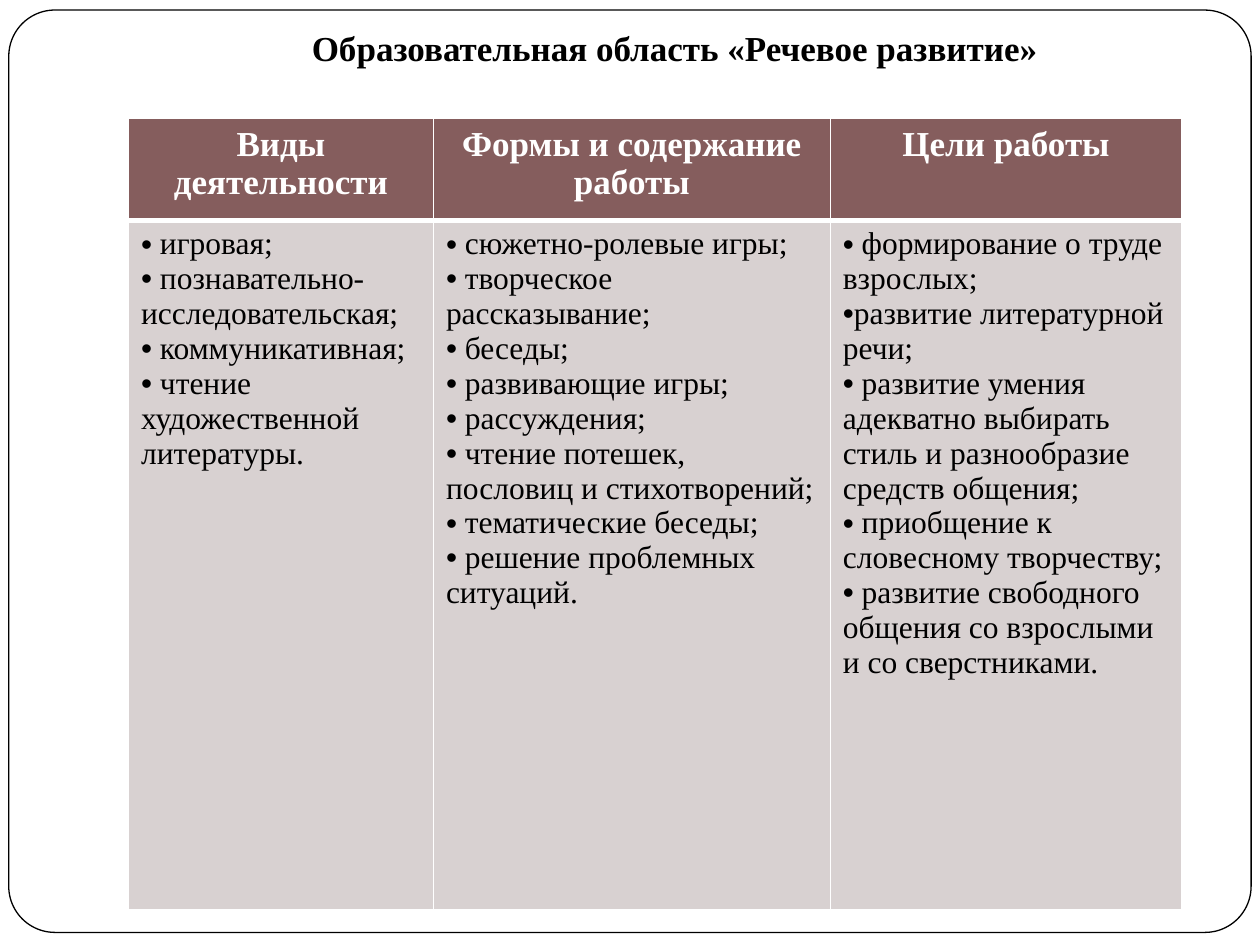
from lxml import etree
from pptx import Presentation
from pptx.dml.color import RGBColor
from pptx.enum.shapes import MSO_SHAPE
from pptx.enum.text import MSO_ANCHOR, PP_ALIGN
from pptx.oxml.ns import qn
from pptx.util import Inches, Pt

# Content
TITLE = "Образовательная область «Речевое развитие»"
COLUMNS = [
    ("Виды деятельности", 2.42, [
        " игровая;",
        " познавательно-исследовательская;",
        " коммуникативная;",
        " чтение художественной литературы.",
    ]),
    ("Формы и содержание работы", 3.15, [
        " сюжетно-ролевые игры;",
        " творческое рассказывание;",
        " беседы;",
        " развивающие игры;",
        " рассуждения;",
        " чтение потешек, пословиц и стихотворений;",
        " тематические беседы;",
        " решение проблемных ситуаций.",
    ]),
    ("Цели работы", 2.79, [
        " формирование о труде взрослых;",
        "развитие литературной речи;",
        " развитие умения адекватно выбирать стиль и разнообразие средств общения;",
        " приобщение к словесному творчеству;",
        " развитие свободного общения со взрослыми и со сверстниками.",
    ]),
]
ROW_HEIGHTS = [0.81, 5.47]

FONT = "Times New Roman"
BLACK = RGBColor(0x00, 0x00, 0x00)
WHITE = RGBColor(0xFF, 0xFF, 0xFF)
HEADER_FILL = RGBColor(0x85, 0x5D, 0x5D)
BODY_FILL = RGBColor(0xD8, 0xD1, 0xD1)


def format_font(p, size, color, bold):
    for r in p.runs:
        r.font.name = FONT
        r.font.size = Pt(size)
        r.font.bold = bold
        r.font.color.rgb = color


def add_bullet(p):
    pPr = p._p.get_or_add_pPr()
    pPr.set("marL", "0")
    pPr.set("indent", str(-Inches(0.12)))
    color = etree.SubElement(pPr, qn("a:buClr"))
    etree.SubElement(color, qn("a:srgbClr"), val=str(BLACK))
    etree.SubElement(pPr, qn("a:buFont"), typeface="Arial")
    etree.SubElement(pPr, qn("a:buChar"), char="•")


def set_borders(cell, top, bottom):
    tcPr = cell._tc.get_or_add_tcPr()
    widths = {"a:lnL": 1, "a:lnR": 1, "a:lnT": top, "a:lnB": bottom}
    for i, (tag, width) in enumerate(widths.items()):
        ln = etree.Element(qn(tag), w=str(Pt(width)))
        fill = etree.SubElement(ln, qn("a:solidFill"))
        etree.SubElement(fill, qn("a:srgbClr"), val=str(WHITE))
        tcPr.insert(i, ln)


def fill_cell(cell, color, top, bottom):
    cell.fill.solid()
    cell.fill.fore_color.rgb = color
    set_borders(cell, top, bottom)


prs = Presentation()
prs.slide_width, prs.slide_height = Inches(10), Inches(7.5)
s = prs.slides.add_slide(prs.slide_layouts[5])

# Rounded frame, sent behind the title
frame = s.shapes.add_shape(MSO_SHAPE.ROUNDED_RECTANGLE, Inches(0.07),
                           Inches(0.08), Inches(9.86), Inches(7.32))
frame.adjustments[0] = 0.05
frame.shadow.inherit = False
frame.fill.solid()
frame.fill.fore_color.rgb = WHITE
frame.line.color.rgb = BLACK
frame.line.width = Pt(0.75)
s.shapes._spTree.insert(2, frame._element)

# Title
title = s.shapes.title
title.left, title.top = Inches(1.33), Inches(0.16)
title.width, title.height = Inches(8.05), Inches(0.44)
tf = title.text_frame
tf.text = TITLE
tf.vertical_anchor = MSO_ANCHOR.TOP
tf.paragraphs[0].alignment = PP_ALIGN.CENTER
format_font(tf.paragraphs[0], 20, BLACK, True)

# Table
table = s.shapes.add_table(
    len(ROW_HEIGHTS), len(COLUMNS), Inches(1.02), Inches(0.94),
    Inches(sum(width for _, width, _ in COLUMNS)),
    Inches(sum(ROW_HEIGHTS))).table
for row, height in zip(table.rows, ROW_HEIGHTS):
    row.height = Inches(height)

for col, (heading, width, items) in enumerate(COLUMNS):
    table.columns[col].width = Inches(width)

    header = table.cell(0, col)
    fill_cell(header, HEADER_FILL, 1, 3)
    header.text_frame.text = heading
    p = header.text_frame.paragraphs[0]
    p.alignment = PP_ALIGN.CENTER
    format_font(p, 20, WHITE, True)

    body = table.cell(1, col)
    fill_cell(body, BODY_FILL, 3, 1)
    body.text_frame.text = "\n".join(items)
    for p in body.text_frame.paragraphs:
        add_bullet(p)
        format_font(p, 18, BLACK, False)

prs.save("out.pptx")
